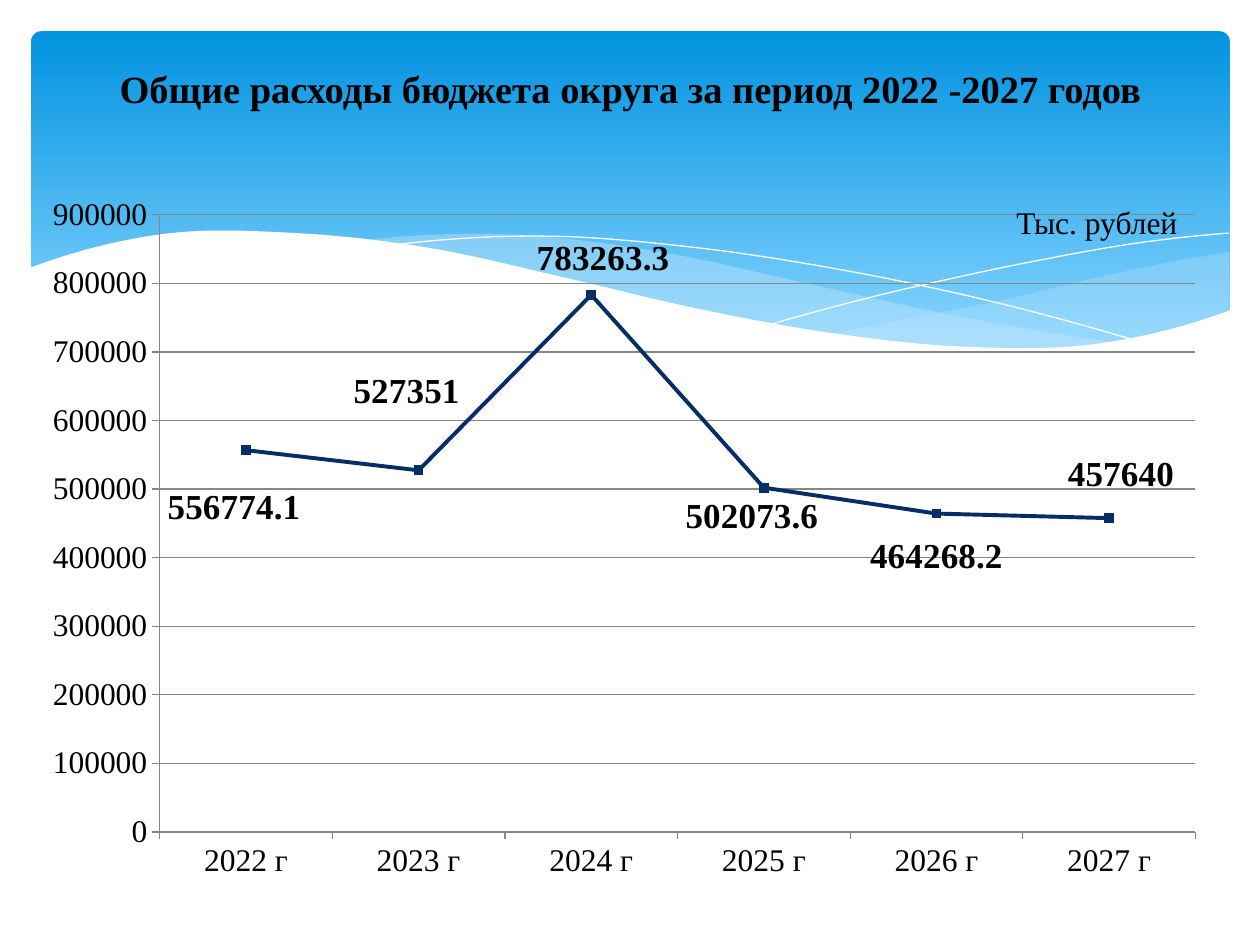
"""Build a slide with a line chart of district budget spending, 2022 to 2027."""
import pptx
import pptx.chart.data
import pptx.dml.color
import pptx.enum.chart
import pptx.enum.shapes
import pptx.enum.text
import pptx.oxml
import pptx.oxml.ns
import pptx.util

Cm, Pt, qn = pptx.util.Cm, pptx.util.Pt, pptx.oxml.ns.qn
INK, NAVY, GREY, WHITE, MIST = "000000", "052E65", "878787", "FFFFFF", "C6E7FC"


def tint(code):
    """Turn a hex string into a colour."""
    return pptx.dml.color.RGBColor.from_string(code)


def curve(left, right, knots, parts=10):
    """Sample a smooth line through evenly spaced heights, all in centimetres."""
    first = 3 * knots[0] - 3 * knots[1] + knots[2]
    last = 3 * knots[-1] - 3 * knots[-2] + knots[-3]
    line = [first, *knots, last]
    spans = len(knots) - 1
    points = []
    for step in range(spans * parts + 1):
        span = min(step // parts, spans - 1)
        t = step / parts - span
        a, b, c, d = line[span:span + 4]
        height = b + t * (c - a + t * (2 * a - 5 * b + 4 * c - d
                                       + t * (3 * b - a - 3 * c + d))) / 2
        across = left + (right - left) * step / (spans * parts)
        points.append((Cm(across), Cm(height)))
    return points


deck = pptx.Presentation()
deck.slide_width, deck.slide_height = Cm(25.4), Cm(19.05)
slide = deck.slides.add_slide(deck.slide_layouts[5])
shapes = slide.shapes
fonts = []

band = shapes.add_shape(pptx.enum.shapes.MSO_SHAPE.ROUNDED_RECTANGLE,
                        Cm(0.63), Cm(0.63), Cm(24.16), Cm(6.86))
band.adjustments[0] = 0.03
band.shadow.inherit = False
band.line.fill.background()
band.fill.gradient()
band.fill.gradient_angle = 270
for stop, code, place in zip(band.fill.gradient_stops, ("0293E0", "83D3FE"), (0, 0.9)):
    stop.color.rgb = tint(code)
    stop.position = place

waves = [
    {"left": 16.79, "right": 24.79, "top": (6.73, 6.4, 6.1, 5.72, 5.36, 5.08),
     "base": (6.73, 6.92, 7.04, 7.02, 6.78, 6.27), "fill": MIST, "alpha": 29},
    {"left": 7.26, "right": 22.68, "top": (4.85, 4.73, 5.1, 5.77, 6.43, 6.93),
     "base": (4.85, 5.38, 6.1, 6.69, 7.03, 6.93), "fill": MIST, "alpha": 40},
    {"left": 7.85, "right": 23.04, "top": (4.95, 4.76, 4.98, 5.44, 6.08, 6.91)},
    {"left": 15.57, "right": 24.77, "top": (6.53, 6.03, 5.6, 5.22, 4.9, 4.7)},
    {"left": 0.58, "right": 24.82, "top": (5.41, 4.72, 4.7, 5, 5.59, 6.22, 6.71,
                                           6.99, 6.93, 6.25),
     "base": (8.36, 8.36, 8.36), "fill": WHITE, "alpha": 100},
]
for wave in waves:
    ends = wave["left"], wave["right"]
    closed = "base" in wave
    points = curve(*ends, wave["top"])
    if closed:
        points += reversed(curve(*ends, wave["base"]))
    pen = shapes.build_freeform(*points[0])
    pen.add_line_segments(points[1:], close=closed)
    shape = pen.convert_to_shape()
    shape.shadow.inherit = False
    if closed:
        shape.line.fill.background()
        shape.fill.solid()
        shape.fill.fore_color.rgb = tint(wave["fill"])
        shade = shape.element.spPr.find(".//" + qn("a:srgbClr"))
        shade.append(pptx.oxml.parse_xml(
            f'<a:alpha {pptx.oxml.ns.nsdecls("a")} val="{wave["alpha"] * 1000}"/>'))
    else:
        shape.fill.background()
        shape.line.color.rgb = tint(WHITE)
        shape.line.width = Pt(0)

title = shapes.title
for key, val in {"left": Cm(0.79), "top": Cm(0.58),
                 "width": Cm(23.83), "height": Cm(2.39)}.items():
    setattr(title, key, val)
title.text_frame.text = "Общие расходы бюджета округа за период 2022 -2027 годов"
title.text_frame.vertical_anchor = pptx.enum.text.MSO_ANCHOR.MIDDLE
head = title.text_frame.paragraphs[0]
head.alignment = pptx.enum.text.PP_ALIGN.CENTER
fonts.append((head.runs[0].font, 22, True))
title.element.getparent().append(title.element)

data = pptx.chart.data.CategoryChartData()
data.categories = [f"{year} г" for year in range(2022, 2028)]
data.add_series("Расходы", (556774.1, 527351, 783263.3, 502073.6, 464268.2, 457640))
chart = shapes.add_chart(pptx.enum.chart.XL_CHART_TYPE.LINE_MARKERS, Cm(0.58), Cm(3.76),
                         Cm(24), Cm(14.3), data).chart
chart.has_legend = chart.has_title = False
chart.plots[0].vary_by_categories = False
fonts.append((chart.font, 18, False))

scale = chart.value_axis
for key, val in {"minimum_scale": 0, "maximum_scale": 900000, "major_unit": 100000,
                 "has_major_gridlines": True}.items():
    setattr(scale, key, val)
for axis in (scale, chart.category_axis):
    axis.major_tick_mark = pptx.enum.chart.XL_TICK_MARK.OUTSIDE
    fonts.append((axis.tick_labels.font, 18, False))

trend = chart.plots[0].series[0]
trend.smooth = False
mark = trend.marker
mark.style = pptx.enum.chart.XL_MARKER_STYLE.SQUARE
mark.size = 5
mark.format.fill.solid()
mark.format.fill.fore_color.rgb = tint(NAVY)
for part, code, width in ((scale, GREY, 0.75), (scale.major_gridlines, GREY, 0.75),
                          (chart.category_axis, GREY, 0.75), (trend, NAVY, 2.25),
                          (mark, NAVY, 0.75)):
    part.format.line.color.rgb = tint(code)
    part.format.line.width = Pt(width)

trend.data_labels.show_value = True
fonts.append((trend.data_labels.font, 20, True))
side = pptx.enum.chart.XL_LABEL_POSITION
shifts = [(side.BELOW, -0.01, 0.04), (side.ABOVE, -0.01, -0.07), (side.ABOVE, 0.01, -0.01),
          (side.BELOW, -0.01, 0), (side.BELOW, 0, 0.02), (side.ABOVE, 0.01, -0.02)]
for spot, (place, *_) in enumerate(shifts):
    label = trend.points[spot].data_label
    label.position = place
    fonts.append((label.font, 20, True))

names = pptx.oxml.ns.nsdecls("c")
layout = "<c:layout {}><c:manualLayout>{}</c:manualLayout></c:layout>"
for label, (_, across, down) in zip(chart.element.iter(qn("c:dLbl")), shifts):
    label.insert(1, pptx.oxml.parse_xml(
        layout.format(names, f'<c:x val="{across}"/><c:y val="{down}"/>')))
for flag in chart.element.iter(qn("c:showLeaderLines")):
    flag.set("val", "0")
chart.element.find(".//" + qn("c:dLbls")).append(pptx.oxml.parse_xml(
    f'<c:extLst {names}><c:ext uri="{{CE6537A1-D6FC-4f65-9D91-7224C49458BB}}" '
    'xmlns:c15="http://schemas.microsoft.com/office/drawing/2012/chart">'
    '<c15:showLeaderLines val="0"/></c:ext></c:extLst>'))

area = chart.element.find(".//" + qn("c:plotArea"))
for old in area.findall(qn("c:layout")):
    area.remove(old)
frame = ('<c:layoutTarget val="inner"/><c:xMode val="edge"/><c:yMode val="edge"/>'
         '<c:x val="0.11"/><c:y val="0.04"/><c:w val="0.87"/><c:h val="0.87"/>')
area.insert(0, pptx.oxml.parse_xml(layout.format(names, frame)))

note = shapes.add_textbox(Cm(20.24), Cm(3.96), Cm(3.78), Cm(1.02)).text_frame
note.word_wrap = False
note.auto_size = pptx.enum.text.MSO_AUTO_SIZE.SHAPE_TO_FIT_TEXT
note.text = "Тыс. рублей"
fonts.append((note.paragraphs[0].runs[0].font, 18, False))

for font, size, bold in fonts:
    for key, val in {"name": "Times New Roman", "size": Pt(size), "bold": bold}.items():
        setattr(font, key, val)
    font.color.rgb = tint(INK)

deck.save("out.pptx")
